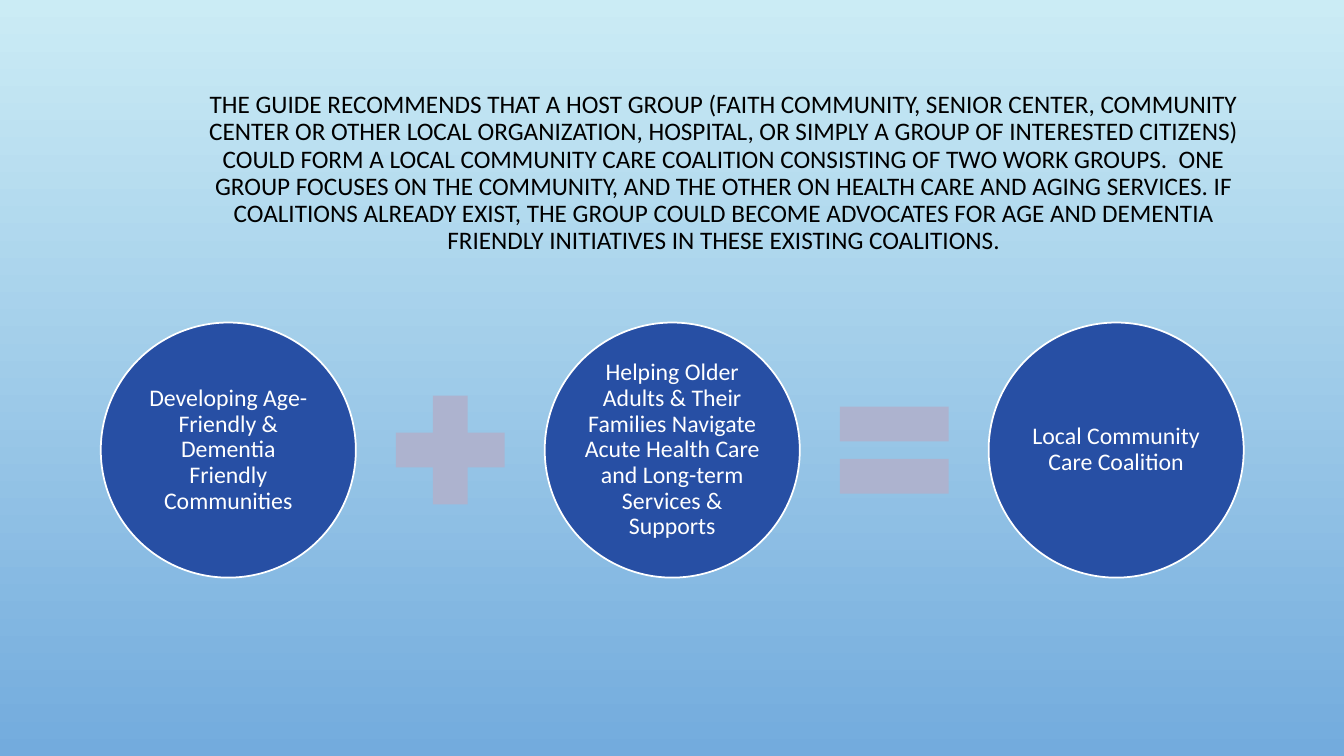
from dataclasses import dataclass

import pptx
import pptx.dml.color
import pptx.enum.shapes
import pptx.enum.text
import pptx.shapes.autoshape
import pptx.slide
import pptx.text.text
import pptx.util

Pt = pptx.util.Pt
RGBColor = pptx.dml.color.RGBColor
ShapeKind = pptx.enum.shapes.MSO_SHAPE


@dataclass(frozen=True)
class Theme:
    font: str = "Calibri"
    title_size: float = 18
    circle_size: float = 17
    outline_width: float = 1.25
    title_color: str = "000000"
    white: str = "FFFFFF"
    circle_fill: str = "274FA4"
    operator_fill: str = "ADB3CF"
    background: tuple[str, str] = ("CBECF5", "73ABDD")


@dataclass(frozen=True)
class Term:
    """One circle of the equation and the operator that follows it."""
    text: str
    operator: ShapeKind | None = None


THEME = Theme()
SLIDE_WIDTH, SLIDE_HEIGHT = 960, 540
FIRST_CIRCLE_LEFT = 72
CIRCLE_PITCH = 317.1
CIRCLE_DIAMETER = 182.2
OPERATOR_SIZE = 105.7
EQUATION_MIDDLE = 321.5

TITLE = (
    "THE GUIDE RECOMMENDS THAT A HOST GROUP (FAITH COMMUNITY, SENIOR CENTER, "
    "COMMUNITY CENTER OR OTHER LOCAL ORGANIZATION, HOSPITAL, OR SIMPLY A GROUP OF "
    "INTERESTED CITIZENS) COULD FORM A LOCAL COMMUNITY CARE COALITION CONSISTING OF "
    "TWO WORK GROUPS.  ONE GROUP FOCUSES ON THE COMMUNITY, AND THE OTHER ON HEALTH "
    "CARE AND AGING SERVICES. IF COALITIONS ALREADY EXIST, THE GROUP COULD BECOME "
    "ADVOCATES FOR AGE AND DEMENTIA FRIENDLY INITIATIVES IN THESE EXISTING COALITIONS."
)
TERMS = (
    Term("Developing Age-Friendly & Dementia Friendly Communities", ShapeKind.MATH_PLUS),
    Term("Helping Older Adults & Their Families Navigate Acute Health Care "
         "and Long-term Services & Supports", ShapeKind.MATH_EQUAL),
    Term("Local Community Care Coalition"),
)


def write_text(frame: pptx.text.text.TextFrame, text: str, *, size: float,
               color: str, inset: float | None = None) -> None:
    frame.word_wrap = True
    frame.vertical_anchor = pptx.enum.text.MSO_ANCHOR.MIDDLE
    if inset is not None:
        frame.margin_left = frame.margin_right = Pt(inset)
        frame.margin_top = frame.margin_bottom = Pt(inset)
    paragraph = frame.paragraphs[0]
    paragraph.alignment = pptx.enum.text.PP_ALIGN.CENTER
    paragraph.line_spacing = 0.9
    run = paragraph.add_run()
    run.text = text
    run.font.name = THEME.font
    run.font.size = Pt(size)
    run.font.color.rgb = RGBColor.from_string(color)


def add_centered_shape(slide: pptx.slide.Slide, kind: ShapeKind, center: float,
                       size: float, fill: str) -> pptx.shapes.autoshape.Shape:
    """Add a square-framed shape centred on the equation's middle line."""
    shape = slide.shapes.add_shape(kind, Pt(center - size / 2),
                                   Pt(EQUATION_MIDDLE - size / 2), Pt(size), Pt(size))
    shape.shadow.inherit = False
    shape.fill.solid()
    shape.fill.fore_color.rgb = RGBColor.from_string(fill)
    shape.line.fill.background()
    return shape


def add_term(slide: pptx.slide.Slide, term: Term, center: float) -> None:
    circle = add_centered_shape(slide, ShapeKind.OVAL, center, CIRCLE_DIAMETER,
                                THEME.circle_fill)
    circle.line.color.rgb = RGBColor.from_string(THEME.white)
    circle.line.width = Pt(THEME.outline_width)
    write_text(circle.text_frame, term.text, size=THEME.circle_size,
               color=THEME.white, inset=1.5)
    if term.operator is not None:
        add_centered_shape(slide, term.operator, center + CIRCLE_PITCH / 2,
                           OPERATOR_SIZE, THEME.operator_fill)


def paint_background(slide: pptx.slide.Slide) -> None:
    fill = slide.background.fill
    fill.gradient()
    fill.gradient_angle = 270
    for stop, color in zip(fill.gradient_stops, THEME.background):
        stop.color.rgb = RGBColor.from_string(color)


def main() -> None:
    presentation = pptx.Presentation()
    presentation.slide_width = Pt(SLIDE_WIDTH)
    presentation.slide_height = Pt(SLIDE_HEIGHT)
    slide = presentation.slides.add_slide(presentation.slide_layouts[6])
    paint_background(slide)
    title = slide.shapes.add_textbox(Pt(139), Pt(65), Pt(756), Pt(118))
    write_text(title.text_frame, TITLE, size=THEME.title_size, color=THEME.title_color)
    first_center = FIRST_CIRCLE_LEFT + CIRCLE_DIAMETER / 2
    for index, term in enumerate(TERMS):
        add_term(slide, term, first_center + index * CIRCLE_PITCH)
    presentation.save("out.pptx")


if __name__ == "__main__":
    main()
